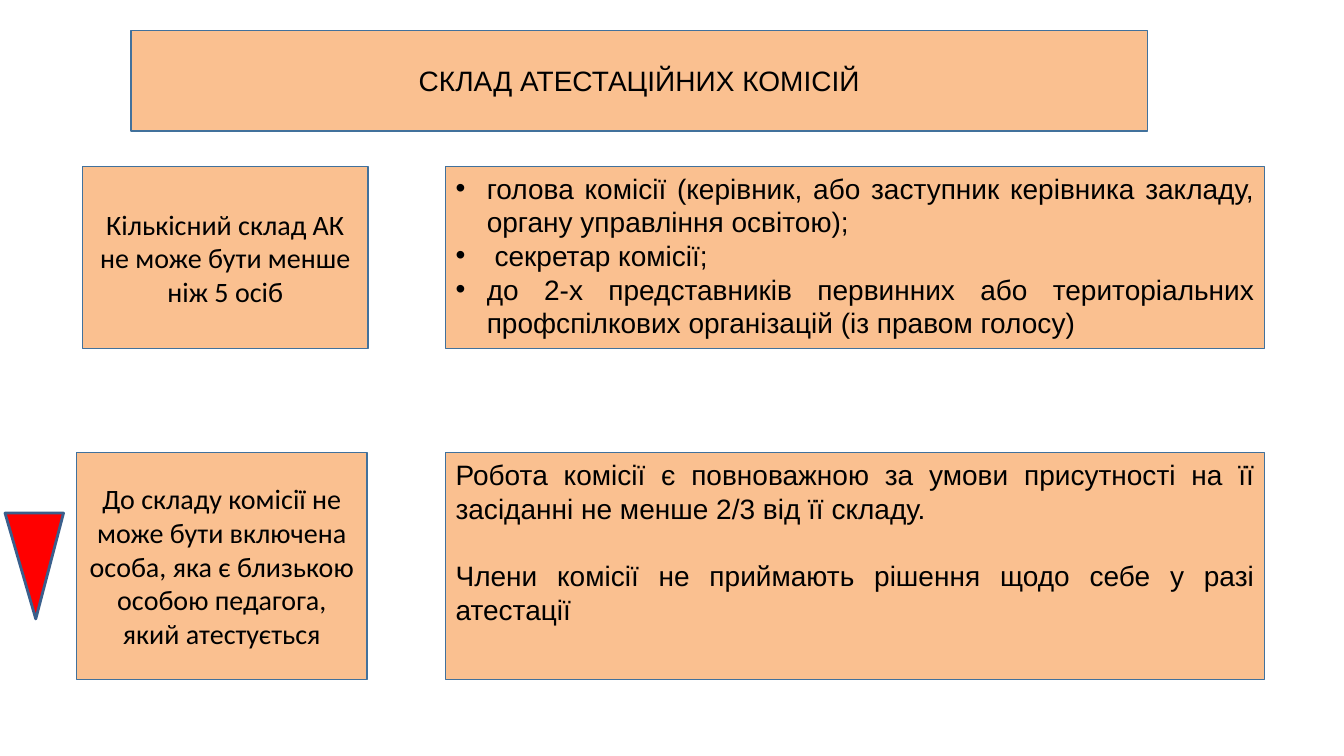
from lxml import etree
from pptx import Presentation, util as u
from pptx.dml.color import RGBColor
from pptx.enum import shapes, text
from pptx.oxml.ns import qn

PEACH = RGBColor(0xFA, 0xC0, 0x90)
RED = RGBColor(0xFF, 0x00, 0x00)
BLUE = RGBColor(0x41, 0x71, 0x9C)
DARK_BLUE = RGBColor(0x3A, 0x5F, 0x8C)
BLACK = RGBColor(0x00, 0x00, 0x00)

RULE_LEFT, RULE_WIDTH = 4.42, 8.12
TOP_ROW, TOP_HEIGHT = 1.65, 1.81
BOTTOM_ROW, BOTTOM_HEIGHT = 4.49, 2.25
INDENT = u.Inches(0.31)

deck = Presentation()
deck.slide_width, deck.slide_height = u.Inches(13.33), u.Inches(7.5)
page = deck.slides.add_slide(deck.slide_layouts[6])


def add_figure(kind, place, fill=PEACH, line=BLUE, weight=1):
    figure = page.shapes.add_shape(kind, *[u.Inches(length) for length in place])
    figure.shadow.inherit = False
    figure.fill.solid()
    figure.fill.fore_color.rgb = fill
    figure.line.color.rgb = line
    figure.line.width = u.Pt(weight)
    return figure


def write(box, lines, font="Arial", align=text.PP_ALIGN.CENTER,
          anchor=text.MSO_ANCHOR.MIDDLE, bullet=None, gap=0):
    """Fill a box with paragraphs, set apart by gap points."""
    frame = box.text_frame
    frame.word_wrap = True
    frame.vertical_anchor = anchor
    for number, line in enumerate(lines):
        para = frame.add_paragraph() if number else frame.paragraphs[0]
        para.alignment = align
        para.space_before = u.Pt(gap if number else 0)
        span = para.add_run()
        span.text = line
        span.font.name = font
        span.font.size = u.Pt(20)
        span.font.color.rgb = BLACK
        if bullet:
            props = para._p.get_or_add_pPr()
            props.set("marL", str(INDENT))
            props.set("indent", str(-INDENT))
            etree.SubElement(props, qn("a:buFont")).set("typeface", "Arial")
            etree.SubElement(props, qn("a:buChar")).set("char", bullet)


justified = dict(align=text.PP_ALIGN.JUSTIFY, anchor=text.MSO_ANCHOR.TOP)
panels = [
    ((1.3, 0.3, 10.08, 1), ["СКЛАД АТЕСТАЦІЙНИХ КОМІСІЙ"], {}),
    ((0.82, TOP_ROW, 2.83, TOP_HEIGHT),
     ["Кількісний склад АК не може бути менше ніж 5 осіб"],
     dict(font="Calibri")),
    ((RULE_LEFT, TOP_ROW, RULE_WIDTH, TOP_HEIGHT),
     ["голова комісії (керівник, або заступник керівника закладу, "
      "органу управління освітою);",
      " секретар комісії;",
      "до 2-х представників первинних або територіальних "
      "профспілкових організацій (із правом голосу)"],
     dict(bullet="•", **justified)),
    ((0.76, BOTTOM_ROW, 2.88, BOTTOM_HEIGHT),
     ["До складу комісії не може бути включена особа, яка є близькою "
      "особою педагога, який атестується"],
     dict(font="Calibri")),
    ((RULE_LEFT, BOTTOM_ROW, RULE_WIDTH, BOTTOM_HEIGHT),
     ["Робота комісії є повноважною за умови присутності на її "
      "засіданні не менше 2/3 від її складу.",
      "Члени комісії не приймають рішення щодо себе у разі атестації"],
     dict(gap=24, **justified)),
]
for place, lines, style in panels:
    write(add_figure(shapes.MSO_SHAPE.RECTANGLE, place), lines, **style)

warning = add_figure(shapes.MSO_SHAPE.ISOSCELES_TRIANGLE, (0.05, 5.09, 0.58, 1.05),
                     fill=RED, line=DARK_BLUE, weight=2)
warning.adjustments[0] = 0.475
warning.rotation = 180

deck.save("out.pptx")
